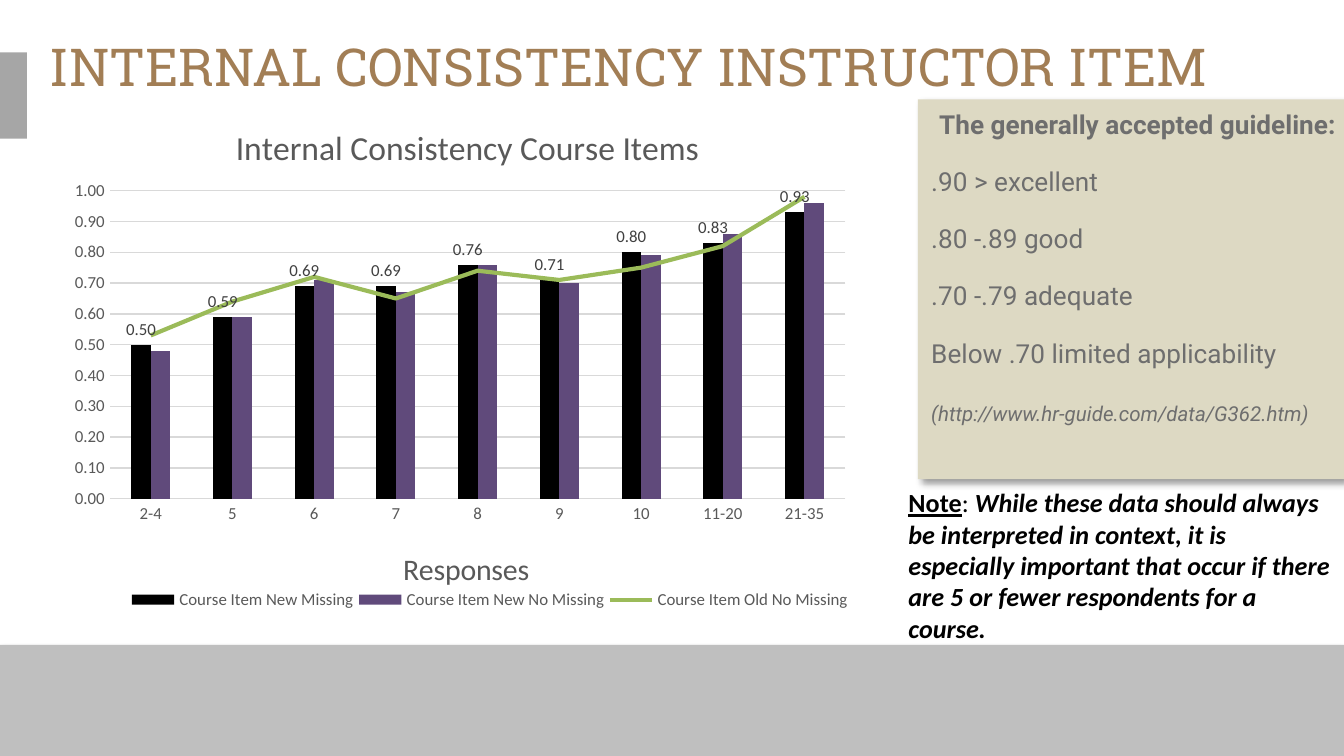
from dataclasses import dataclass

from lxml import etree
from pptx import Presentation
from pptx import util as u
from pptx.chart.data import CategoryChartData
from pptx.dml.color import RGBColor
from pptx.enum import chart as ch
from pptx.enum import shapes, text
from pptx.oxml import parse_xml
from pptx.oxml.ns import nsdecls, qn

BLACK = RGBColor(0x00, 0x00, 0x00)
BAND = RGBColor(0xBF, 0xBF, 0xBF)
TAB = RGBColor(0xA6, 0xA6, 0xA6)
BROWN = RGBColor(0xA2, 0x7E, 0x55)
SAND = RGBColor(0xDD, 0xD9, 0xC3)
GREY = RGBColor(0x6E, 0x6E, 0x6E)
AXIS = RGBColor(0x59, 0x59, 0x59)
LABEL = RGBColor(0x40, 0x40, 0x40)
GRID = RGBColor(0xD9, 0xD9, 0xD9)
PURPLE = RGBColor(0x60, 0x4A, 0x7B)
GREEN = RGBColor(0x9B, 0xBB, 0x59)


@dataclass
class Box:
    x: float
    y: float
    w: float
    h: float

    def lengths(self) -> list:
        return [u.Cm(v) for v in (self.x, self.y, self.w, self.h)]


@dataclass
class Shadow:
    alpha: int
    blur: float
    dist: float
    angle: int


@dataclass
class Run:
    text: str
    size: float
    font: str
    color: RGBColor
    bold: bool = False
    italic: bool = False
    underline: bool = False


@dataclass
class Series:
    name: str
    values: tuple
    color: RGBColor


CATEGORIES = ("2-4", "5", "6", "7", "8", "9", "10", "11-20", "21-35")
SERIES = (
    Series("Course Item New Missing", (0.5, 0.59, 0.69, 0.69, 0.76, 0.71, 0.8, 0.83, 0.93), BLACK),
    Series("Course Item New No Missing", (0.48, 0.59, 0.71, 0.67, 0.76, 0.7, 0.79, 0.86, 0.96), PURPLE),
    Series("Course Item Old No Missing", (0.53, 0.64, 0.72, 0.65, 0.74, 0.71, 0.75, 0.82, 0.98), GREEN),
)
GUIDELINE = (
    Run("The generally accepted guideline:", 14, "Roboto", GREY, bold=True),
    Run(".90 > excellent", 14, "Roboto", GREY),
    Run(".80 -.89 good", 14, "Roboto", GREY),
    Run(".70 -.79 adequate", 14, "Roboto", GREY),
    Run("Below .70 limited applicability", 14, "Roboto", GREY),
    Run("(http://www.hr-guide.com/data/G362.htm)", 11, "Roboto", GREY, italic=True),
)
NOTE = (
    Run("Note", 14, "Calibri", BLACK, bold=True, underline=True),
    Run(": ", 14, "Calibri", BLACK),
    Run("While these data should always be interpreted in context, it is especially "
        "important that occur if there are 5 or fewer respondents for a course.",
        14, "Calibri", BLACK, bold=True, italic=True),
)


def add_rect(s, box: Box, color: RGBColor, shadow: Shadow | None = None):
    sp = s.shapes.add_shape(shapes.MSO_SHAPE.RECTANGLE, *box.lengths())
    sp.fill.solid()
    sp.fill.fore_color.rgb = color
    sp.line.fill.background()
    sp.shadow.inherit = False
    if shadow:
        effects = sp._element.spPr.find(qn("a:effectLst"))
        effects.append(parse_xml(
            f'<a:outerShdw {nsdecls("a")} blurRad="{u.Pt(shadow.blur)}" '
            f'dist="{u.Pt(shadow.dist)}" dir="{shadow.angle * 60000}" algn="t" rotWithShape="0">'
            f'<a:srgbClr val="000000"><a:alpha val="{shadow.alpha * 1000}"/></a:srgbClr>'
            '</a:outerShdw>'))
    return sp


def add_text(s, box: Box):
    return s.shapes.add_textbox(*box.lengths()).text_frame


def prepare_frame(tf, left: float, top: float, right: float, bottom: float) -> None:
    tf.word_wrap = True
    tf.vertical_anchor = text.MSO_ANCHOR.TOP
    tf.margin_left, tf.margin_top = u.Cm(left), u.Cm(top)
    tf.margin_right, tf.margin_bottom = u.Cm(right), u.Cm(bottom)


def style_font(font, size: float, color: RGBColor, name: str = "Calibri") -> None:
    font.size, font.name = u.Pt(size), name
    font.color.rgb = color


def add_run(p, run: Run) -> None:
    r = p.add_run()
    r.text = run.text
    style_font(r.font, run.size, run.color, run.font)
    r.font.bold, r.font.italic, r.font.underline = run.bold, run.italic, run.underline


def fill_guideline(tf) -> None:
    for i, run in enumerate(GUIDELINE):
        p = tf.add_paragraph() if i else tf.paragraphs[0]
        p.alignment = text.PP_ALIGN.LEFT if i else text.PP_ALIGN.CENTER
        p.line_spacing, p.space_after = u.Pt(21.6), u.Pt(9)
        add_run(p, run)


def set_layout(parent, x: float, y: float, w: float = 0, h: float = 0, inner: bool = False) -> None:
    for old in parent.findall(qn("c:layout")):
        parent.remove(old)
    layout = parse_xml(f'<c:layout {nsdecls("c")}><c:manualLayout/></c:layout>')
    items = [("layoutTarget", "inner")] if inner else []
    items += [("xMode", "edge"), ("yMode", "edge"), ("x", x), ("y", y)]
    items += [("w", w), ("h", h)] if w else []
    for tag, value in items:
        etree.SubElement(layout[0], qn(f"c:{tag}")).set("val", str(value))
    before = parent.find(qn("c:tx"))
    if before is None:
        before = parent.find(qn("c:legendPos"))
    if before is None:
        parent.insert(0, layout)
    else:
        before.addnext(layout)


def set_title(owner, title: str, size: float, x: float, y: float) -> None:
    heading = owner.chart_title if hasattr(owner, "chart_title") else owner.axis_title
    p = heading.text_frame.paragraphs[0]
    add_run(p, Run(title, size, "Calibri", AXIS))
    set_layout(heading._element, x, y)


def move_last_to_line(plot) -> None:
    bars = plot._element
    ser = bars.findall(qn("c:ser"))[-1]
    for flag in ser.findall(qn("c:invertIfNegative")):
        ser.remove(flag)
    line = parse_xml(f'<c:lineChart {nsdecls("c")}><c:grouping val="standard"/>'
                     '<c:varyColors val="0"/><c:marker val="1"/></c:lineChart>')
    line.insert(2, ser)
    for axis in bars.findall(qn("c:axId")):
        etree.SubElement(line, qn("c:axId")).set("val", axis.get("val"))
    bars.addnext(line)


def add_consistency_chart(s, box: Box) -> None:
    data = CategoryChartData(number_format="0.00")
    data.categories = CATEGORIES
    for item in SERIES:
        data.add_series(item.name, item.values)
    chart = s.shapes.add_chart(ch.XL_CHART_TYPE.COLUMN_CLUSTERED, *box.lengths(), data).chart
    style_font(chart.font, 10, BLACK)
    set_title(chart, "Internal Consistency Course Items", 18, 0.21, 0.05)
    set_title(chart.category_axis, "Responses", 16, 0.42, 0.81)

    for axis in (chart.category_axis, chart.value_axis):
        axis.major_tick_mark = axis.minor_tick_mark = ch.XL_TICK_MARK.NONE
        style_font(axis.tick_labels.font, 9, AXIS)
    values = chart.value_axis
    values.minimum_scale, values.maximum_scale, values.major_unit = 0, 1, 0.1
    values.tick_labels.number_format = "0.00"
    values.tick_labels.number_format_is_linked = False
    values.format.line.fill.background()
    for line in (chart.category_axis.format.line, values.major_gridlines.format.line):
        line.color.rgb, line.width = GRID, u.Pt(0.75)

    chart.has_legend = True
    chart.legend.position = ch.XL_LEGEND_POSITION.BOTTOM
    chart.legend.include_in_layout = False
    style_font(chart.legend.font, 9, AXIS)
    set_layout(chart.legend._element, 0.08, 0.88, 0.91, 0.06)

    plot = chart.plots[0]
    plot.gap_width, plot.overlap, plot.vary_by_categories = 219, 0, False
    move_last_to_line(plot)
    set_layout(plot._element.getparent(), 0.06, 0.18, 0.92, 0.55, inner=True)
    for item, series in zip(SERIES, plot.series):
        series.format.fill.solid()
        series.format.fill.fore_color.rgb = item.color
    labels = plot.series[0].data_labels
    labels.show_value = True
    labels.position = ch.XL_LABEL_POSITION.OUTSIDE_END
    labels.number_format, labels.number_format_is_linked = "0.00", False
    style_font(labels.font, 9, LABEL)
    trend = chart.plots[1].series[0]
    trend.smooth = False
    trend.marker.style = ch.XL_MARKER_STYLE.NONE
    trend.format.line.color.rgb, trend.format.line.width = SERIES[-1].color, u.Pt(2.25)


def main() -> None:
    prs = Presentation()
    prs.slide_width, prs.slide_height = u.Cm(25.4), u.Cm(14.29)
    s = prs.slides.add_slide(prs.slide_layouts[6])
    add_rect(s, Box(0, 12.19, 25.4, 2.1), BAND, Shadow(35, 3.1, 1.8, 90))
    add_rect(s, Box(0, 0.99, 0.51, 1.63), TAB)
    tf = add_text(s, Box(0.94, 0.64, 22.86, 1.6))
    prepare_frame(tf, 0, 0, 0, 0)
    add_run(tf.paragraphs[0], Run("INTERNAL CONSISTENCY INSTRUCTOR ITEM", 28, "Roboto Slab", BROWN))
    sp = add_rect(s, Box(17.35, 1.88, 8.05, 7.18), SAND, Shadow(40, 4, 3, 45))
    prepare_frame(sp.text_frame, 0.25, 0, 0, 0)
    fill_guideline(sp.text_frame)
    tf = add_text(s, Box(16.92, 9.07, 8.48, 3.25))
    prepare_frame(tf, 0.25, 0.13, 0.2, 0.13)
    for run in NOTE:
        add_run(tf.paragraphs[0], run)
    add_consistency_chart(s, Box(1.17, 1.7, 15.11, 10.59))
    prs.save("out.pptx")


if __name__ == "__main__":
    main()
